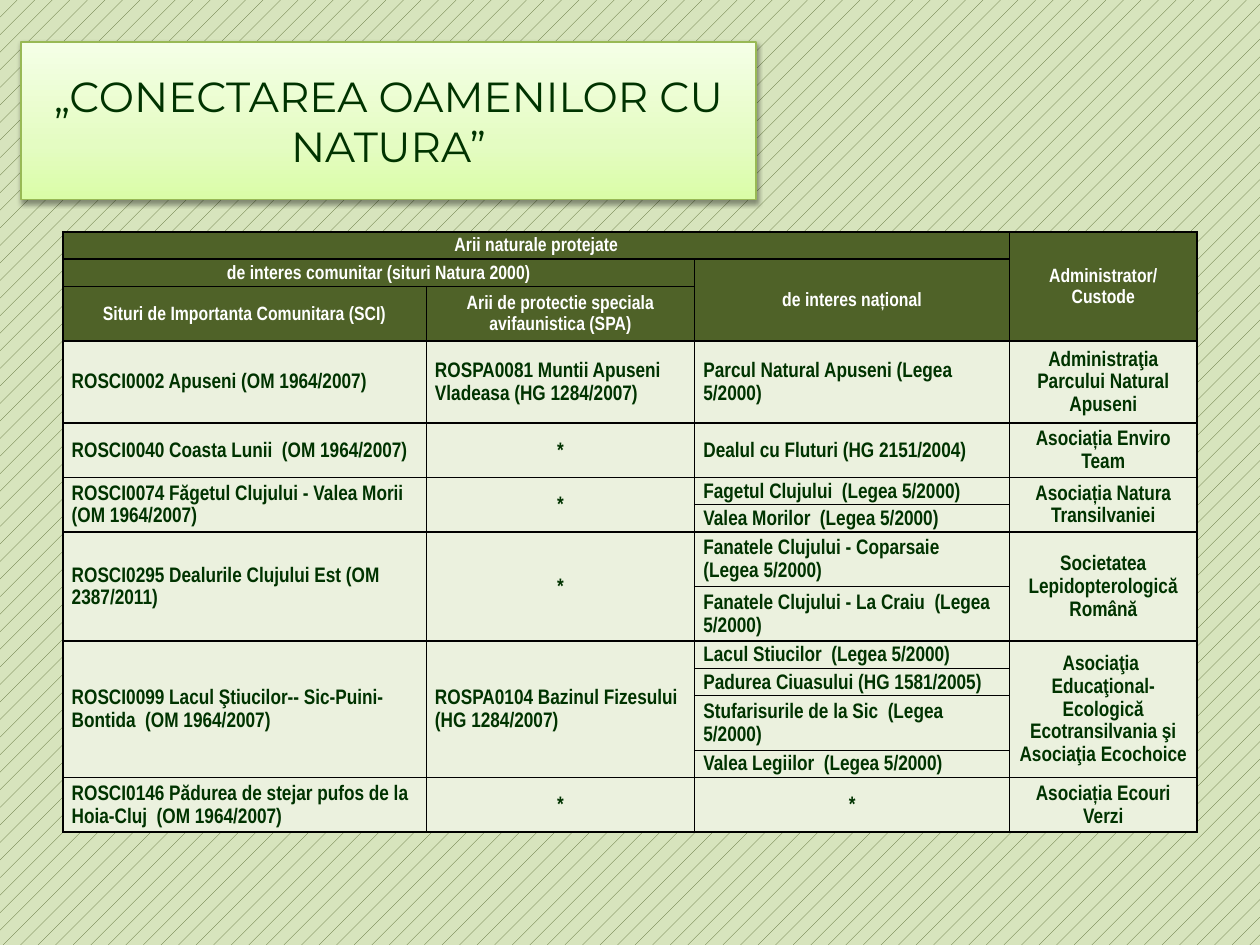
"""Build the slide on protected natural areas and their custodians."""
from lxml import etree
from pptx import Presentation
from pptx.dml.color import RGBColor
from pptx.enum.dml import MSO_PATTERN
from pptx.enum.text import MSO_ANCHOR, MSO_AUTO_SIZE, PP_ALIGN
from pptx.oxml import parse_xml
from pptx.oxml.ns import nsdecls, qn
from pptx.util import Pt

DOTS = MSO_PATTERN.PERCENT_5
MIDDLE = MSO_ANCHOR.MIDDLE
NO_FIT = MSO_AUTO_SIZE.NONE
CENTER, LEFT = PP_ALIGN.CENTER, PP_ALIGN.LEFT
OLIVE = RGBColor(0x4F, 0x62, 0x28)
SAGE = RGBColor(0xD7, 0xE4, 0xBD)
PALE = RGBColor(0xEB, 0xF1, 0xDE)
DARK = RGBColor(0x00, 0x33, 0x00)
WHITE = RGBColor(0xFF, 0xFF, 0xFF)
LIME = RGBColor(0x98, 0xB9, 0x55)
BLACK = RGBColor(0x00, 0x00, 0x00)
STOPS = [(0, RGBColor(0xDA, 0xFD, 0xA7)), (35, RGBColor(0xE4, 0xFC, 0xC2)),
         (100, RGBColor(0xF5, 0xFF, 0xE7))]

HEADER_ROWS = 3
COLS = [207.6, 153.4, 180, 107]
LINE_COUNTS = [1, 1, 2, 3, 2, 1, 1, 2, 2, 1, 1, 2, 1, 2]
ROWS = [
    ["Arii naturale protejate", None, None, "Administrator/ Custode"],
    ["de interes comunitar (situri Natura 2000)", None, "de interes național", None],
    ["Situri de Importanta Comunitara (SCI)",
     "Arii de protectie speciala avifaunistica (SPA)", None, None],
    ["ROSCI0002 Apuseni (OM 1964/2007)",
     "ROSPA0081 Muntii Apuseni Vladeasa (HG 1284/2007)",
     "Parcul Natural Apuseni (Legea 5/2000)",
     "Administraţia Parcului Natural Apuseni"],
    ["ROSCI0040 Coasta Lunii  (OM 1964/2007)", "*",
     "Dealul cu Fluturi (HG 2151/2004)", "Asociația Enviro Team"],
    ["ROSCI0074 Făgetul Clujului - Valea Morii  (OM 1964/2007)", "*",
     "Fagetul Clujului  (Legea 5/2000)", "Asociația Natura Transilvaniei"],
    [None, None, "Valea Morilor  (Legea 5/2000)", None],
    ["ROSCI0295 Dealurile Clujului Est (OM 2387/2011)", "*",
     "Fanatele Clujului - Coparsaie  (Legea 5/2000)",
     "Societatea Lepidopterologică Română"],
    [None, None, "Fanatele Clujului - La Craiu  (Legea 5/2000)", None],
    ["ROSCI0099 Lacul Ştiucilor-- Sic-Puini-Bontida  (OM 1964/2007)",
     "ROSPA0104 Bazinul Fizesului (HG 1284/2007)",
     "Lacul Stiucilor  (Legea 5/2000)",
     "Asociaţia  Educaţional-Ecologică Ecotransilvania şi Asociaţia Ecochoice"],
    [None, None, "Padurea Ciuasului (HG 1581/2005)", None],
    [None, None, "Stufarisurile de la Sic  (Legea 5/2000)", None],
    [None, None, "Valea Legiilor  (Legea 5/2000)", None],
    ["ROSCI0146 Pădurea de stejar pufos de la Hoia-Cluj  (OM 1964/2007)",
     "*", "*", "Asociația Ecouri Verzi"],
]
MERGES = [(0, 0, 0, 2), (0, 3, 2, 3), (1, 0, 1, 1), (1, 2, 2, 2)]
MERGES += [(top, c, bottom, c) for top, bottom in [(5, 6), (7, 8), (9, 12)]
           for c in (0, 1, 3)]


def add_run(p, text, font, size, color, bold=False):
    r = p.add_run()
    r.text = text
    r.font.name = font
    r.font.size = Pt(size)
    r.font.bold = bold
    r.font.color.rgb = color


def add_borders(cell):
    tc_pr = cell._tc.get_or_add_tcPr()
    for side in ("lnL", "lnR", "lnT", "lnB"):
        ln = etree.SubElement(tc_pr, qn(f"a:{side}"), w=str(Pt(1)))
        solid = etree.SubElement(ln, qn("a:solidFill"))
        etree.SubElement(solid, qn("a:srgbClr"), val=str(BLACK))


prs = Presentation()
prs.slide_width, prs.slide_height = Pt(720), Pt(540)
s = prs.slides.add_slide(prs.slide_layouts[5])
bg = s.background.fill
bg.patterned()
bg.pattern = DOTS
bg.fore_color.rgb = OLIVE
bg.back_color.rgb = SAGE

sp = s.shapes.title
sp.left, sp.top, sp.width, sp.height = Pt(12), Pt(24), Pt(420), Pt(90)
sp_pr = sp._element.spPr
geom = etree.SubElement(sp_pr, qn("a:prstGeom"), prst="roundRect")
etree.SubElement(geom, qn("a:avLst"))
stops = "".join(f'<a:gs pos="{pos * 1000}"><a:srgbClr val="{color}"/></a:gs>'
                for pos, color in STOPS)
sp_pr.append(parse_xml(
    f'<a:gradFill {nsdecls("a")} rotWithShape="1"><a:gsLst>{stops}</a:gsLst>'
    '<a:lin ang="16200000" scaled="0"/></a:gradFill>'))
sp.line.color.rgb = LIME
sp.line.width = Pt(0.75)
sp_pr.append(parse_xml(
    f'<a:effectLst {nsdecls("a")}><a:outerShdw blurRad="{Pt(3.1)}" dist="{Pt(1.6)}" '
    f'dir="5400000" rotWithShape="0"><a:srgbClr val="{BLACK}">'
    '<a:alpha val="38000"/></a:srgbClr></a:outerShdw></a:effectLst>'))
tf = sp.text_frame
tf.word_wrap = True
tf.auto_size = NO_FIT
tf.vertical_anchor = MIDDLE
p = tf.paragraphs[0]
p.alignment = CENTER
add_run(p, "„CONECTAREA OAMENILOR CU NATURA”", "Montserrat", 24, DARK)

heights = [15.6 * n for n in LINE_COUNTS]
table = s.shapes.add_table(len(ROWS), len(COLS), Pt(36), Pt(132.5),
                           Pt(sum(COLS)), Pt(sum(heights))).table
table.first_row = table.horz_banding = False
for column, width in zip(table.columns, COLS):
    column.width = Pt(width)
for row, height in zip(table.rows, heights):
    row.height = Pt(height)
for top, left, bottom, right in MERGES:
    table.cell(top, left).merge(table.cell(bottom, right))

for i, texts in enumerate(ROWS):
    header = i < HEADER_ROWS
    for j, text in enumerate(texts):
        cell = table.cell(i, j)
        add_borders(cell)
        cell.fill.solid()
        cell.fill.fore_color.rgb = OLIVE if header else PALE
        cell.margin_left = cell.margin_right = Pt(5)
        cell.margin_top = cell.margin_bottom = Pt(0)
        cell.vertical_anchor = MIDDLE
        if text is None:
            continue
        p = cell.text_frame.paragraphs[0]
        p.line_spacing = 1.15
        p.alignment = CENTER if header or j == 3 or text == "*" else LEFT
        add_run(p, text, "Arial Narrow", 11 if header else 12,
                WHITE if header else DARK, bold=True)

prs.save("out.pptx")
